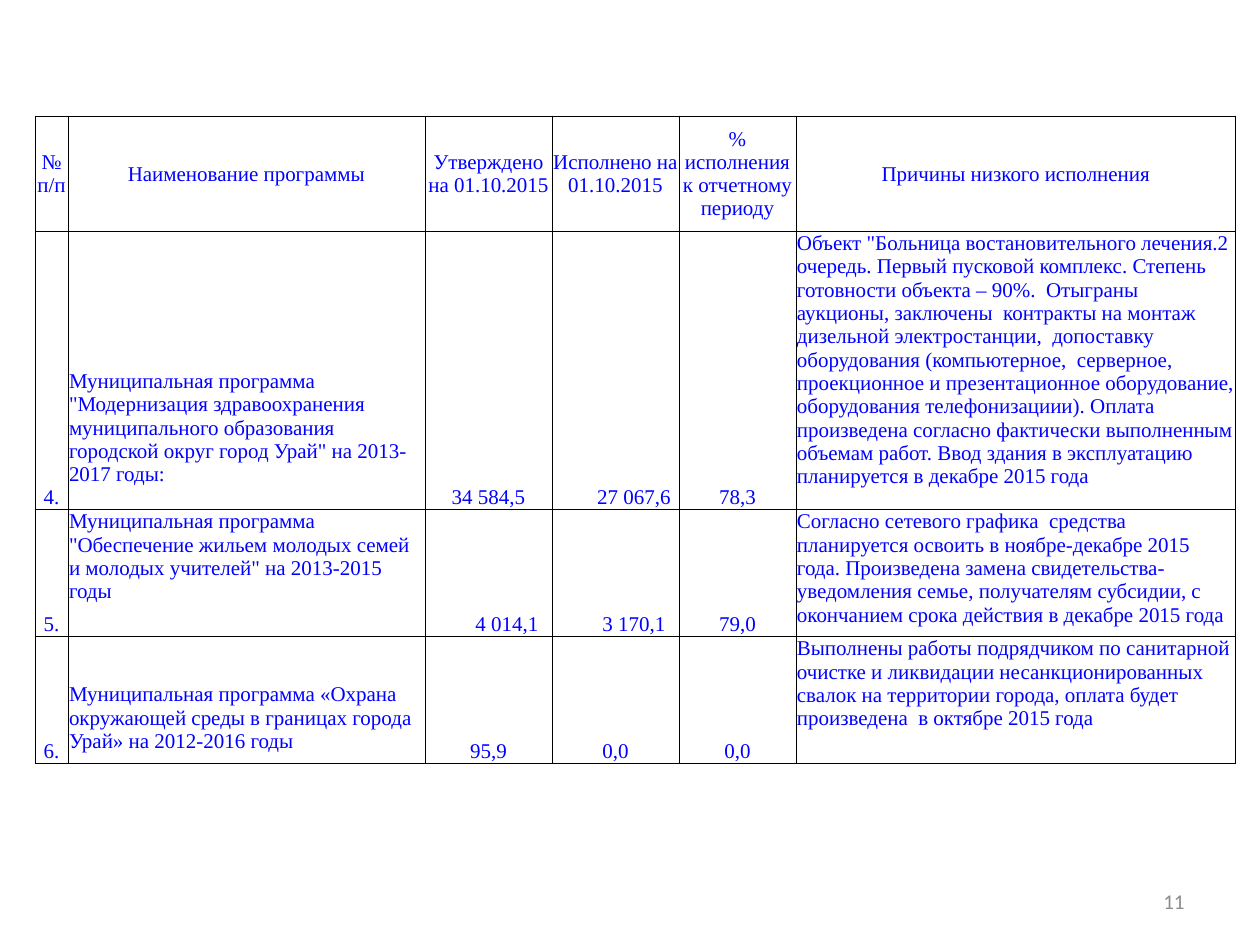
import lxml.etree
import pptx
import pptx.dml.color
import pptx.enum.text
import pptx.oxml.ns
import pptx.util

EMU_PER_PX = 914400 / 126
COLORS = {"text": "0000FF", "border": "000000", "cell": "FFFFFF", "number": "8C8C8C"}
ALIGN = pptx.enum.text.PP_ALIGN
ANCHOR = pptx.enum.text.MSO_ANCHOR

COLUMN_WIDTHS = [33, 357, 127, 127, 117, 440]
ROW_HEIGHTS = [115, 269, 123, 127]
NAME_COLUMN, REASON_COLUMN = 1, 5
LINE = 23
NUMBER_INDENT = 37
# Extra top margins lower the programme names; extra left margins shift amounts.
TOP_INDENTS = {(1, NAME_COLUMN): 6 * LINE, (3, NAME_COLUMN): 2 * LINE}
LEFT_INDENTS = {(1, 3): NUMBER_INDENT, (2, 2): NUMBER_INDENT, (2, 3): NUMBER_INDENT}

ROWS = [
    ["№ п/п", "Наименование программы", "Утверждено на 01.10.2015",
     "Исполнено на 01.10.2015", "% исполнения к отчетному периоду",
     "Причины низкого исполнения"],
    ["4.",
     'Муниципальная программа "Модернизация здравоохранения муниципального '
     'образования городской округ город Урай" на 2013-2017 годы:',
     "34 584,5", "27 067,6", "78,3",
     'Объект "Больница востановительного лечения.2 очередь. Первый пусковой '
     "комплекс. Степень готовности объекта – 90%.  Отыграны аукционы, заключены  "
     "контракты на монтаж дизельной электростанции,  допоставку оборудования "
     "(компьютерное,  серверное, проекционное и презентационное оборудование, "
     "оборудования телефонизациии). Оплата произведена согласно фактически "
     "выполненным объемам работ. Ввод здания в эксплуатацию планируется в "
     "декабре 2015 года"],
    ["5.",
     'Муниципальная программа "Обеспечение жильем молодых семей и молодых '
     'учителей" на 2013-2015 годы',
     "4 014,1", "3 170,1", "79,0",
     "Согласно сетевого графика  средства планируется освоить в ноябре-декабре "
     "2015 года. Произведена замена свидетельства-уведомления семье, получателям "
     "субсидии, с окончанием срока действия в декабре 2015 года"],
    ["6.",
     "Муниципальная программа «Охрана окружающей среды в границах города Урай» "
     "на 2012-2016 годы",
     "95,9", "0,0", "0,0",
     "Выполнены работы подрядчиком по санитарной очистке и ликвидации "
     "несанкционированных свалок на территории города, оплата будет произведена  "
     "в октябре 2015 года"],
]


def px(length):
    return pptx.util.Emu(round(length * EMU_PER_PX))


def rgb(name):
    return pptx.dml.color.RGBColor.from_string(COLORS[name])


def format_paragraph(paragraph, font_name, color, alignment):
    paragraph.alignment = alignment
    for run in paragraph.runs:
        run.font.name = font_name
        run.font.size = pptx.util.Pt(12)
        run.font.color.rgb = rgb(color)


def add_borders(cell):
    """Outline a cell; called before the fill, which must follow the lines in the XML."""
    properties = cell._tc.get_or_add_tcPr()
    qn = pptx.oxml.ns.qn
    for side in ("a:lnL", "a:lnR", "a:lnT", "a:lnB"):
        line = lxml.etree.SubElement(properties, qn(side), w=str(pptx.util.Pt(0.5)))
        fill = lxml.etree.SubElement(line, qn("a:solidFill"))
        lxml.etree.SubElement(fill, qn("a:srgbClr"), val=COLORS["border"])


def fill_cell(cell, text, row, column):
    is_prose = row > 0 and column in (NAME_COLUMN, REASON_COLUMN)
    add_borders(cell)
    cell.fill.solid()
    cell.fill.fore_color.rgb = rgb("cell")
    cell.margin_left = px(1 + LEFT_INDENTS.get((row, column), 0))
    cell.margin_top = px(1 + TOP_INDENTS.get((row, column), 0))
    cell.margin_right = px(1)
    cell.margin_bottom = 0
    if row == 0:
        cell.vertical_anchor = ANCHOR.MIDDLE
    else:
        cell.vertical_anchor = ANCHOR.TOP if is_prose else ANCHOR.BOTTOM
    cell.text_frame.text = text
    format_paragraph(cell.text_frame.paragraphs[0], "Times New Roman", "text",
                     ALIGN.LEFT if is_prose else ALIGN.CENTER)


def add_programme_table(slide):
    shape = slide.shapes.add_table(
        len(ROWS), len(COLUMN_WIDTHS), px(35), px(116),
        px(sum(COLUMN_WIDTHS)), px(sum(ROW_HEIGHTS)))
    table = shape.table
    table.first_row = False
    table.horz_banding = False
    for column, width in zip(table.columns, COLUMN_WIDTHS):
        column.width = px(width)
    for row, height in zip(table.rows, ROW_HEIGHTS):
        row.height = px(height)
    for row, texts in enumerate(ROWS):
        for column, text in enumerate(texts):
            fill_cell(table.cell(row, column), text, row, column)


def add_page_number(slide, number):
    text_frame = slide.shapes.add_textbox(px(903), px(876), px(294), px(50)).text_frame
    text_frame.word_wrap = True
    text_frame.vertical_anchor = ANCHOR.MIDDLE
    text_frame.text = number
    format_paragraph(text_frame.paragraphs[0], "Calibri", "number", ALIGN.RIGHT)


def main():
    presentation = pptx.Presentation()
    presentation.slide_width = px(1260)
    presentation.slide_height = px(945)
    slide = presentation.slides.add_slide(presentation.slide_layouts.get_by_name("Blank"))
    add_page_number(slide, "11")
    add_programme_table(slide)
    presentation.save("out.pptx")


if __name__ == "__main__":
    main()
